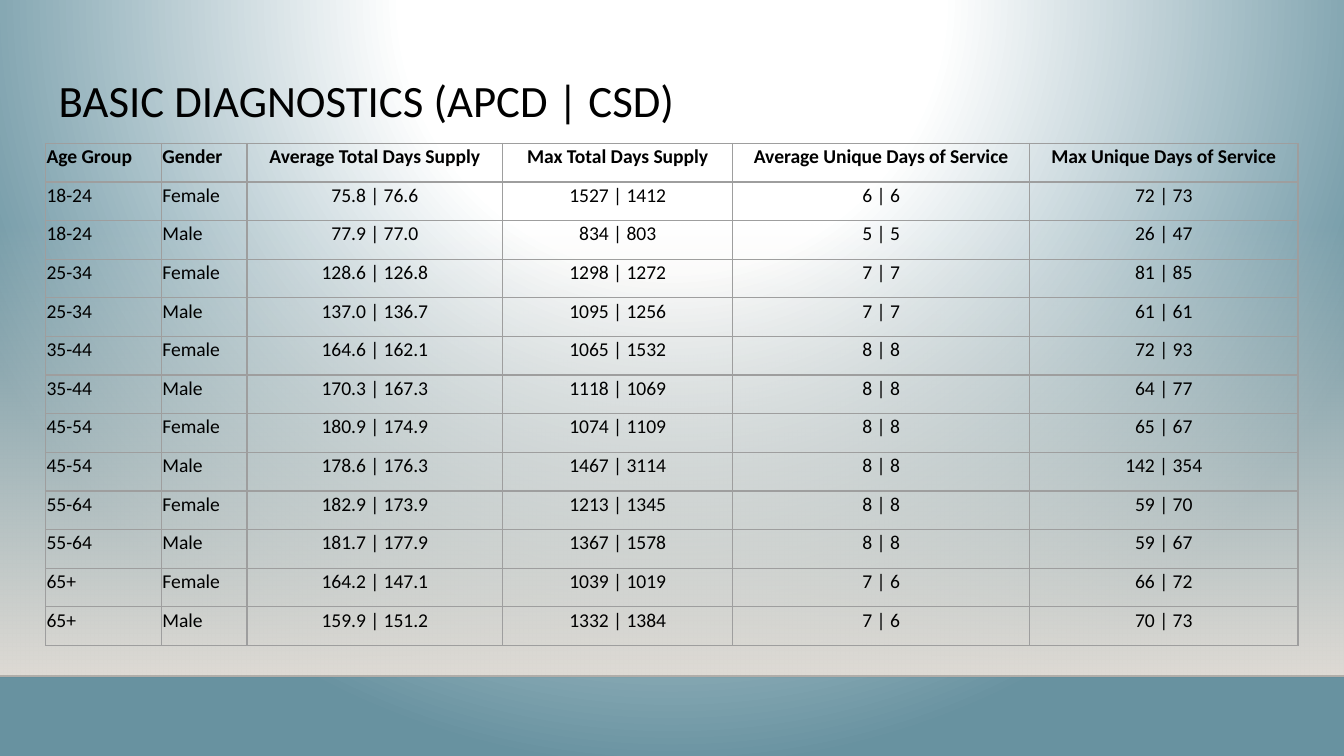
from dataclasses import dataclass

from lxml.etree import SubElement
from pptx import Presentation
from pptx.dml.color import RGBColor
from pptx.enum.shapes import MSO_CONNECTOR, MSO_SHAPE
from pptx.enum.text import MSO_ANCHOR, PP_ALIGN
from pptx.oxml import parse_xml
from pptx.oxml.ns import nsdecls, qn
from pptx.slide import Slide
from pptx.table import _Cell
from pptx.text.text import _Paragraph
from pptx.util import Cm, Pt

COLOURS = {
    "white": "FFFFFF",
    "teal": "6892A0",
    "sand": "DFDBD5",
    "horizon": "000001",
    "text": "000000",
    "border": "9E9E9E",
}
FONT = "Calibri"
SLIDE_WIDTH, SLIDE_HEIGHT = Cm(25.4), Cm(14.29)
HORIZON_TOP = Cm(12.78)
CONTENT_LEFT, CONTENT_WIDTH = Cm(0.86), Cm(23.67)
ROW_HEIGHT = Cm(0.73)


@dataclass(frozen=True)
class GradientStop:
    position: int
    colour: str
    opacity: int = 100


@dataclass(frozen=True)
class Column:
    heading: str
    width: float
    alignment: PP_ALIGN = PP_ALIGN.CENTER


COLUMNS = [
    Column("Age Group", 2.19, PP_ALIGN.LEFT),
    Column("Gender", 1.62, PP_ALIGN.LEFT),
    Column("Average Total Days Supply", 4.83),
    Column("Max Total Days Supply", 4.35),
    Column("Average Unique Days of Service", 5.61),
    Column("Max Unique Days of Service", 5.07),
]
ROWS = [
    ("18-24", "Female", "75.8 | 76.6", "1527 | 1412", "6 | 6", "72 | 73"),
    ("18-24", "Male", "77.9 | 77.0", "834 | 803", "5 | 5", "26 | 47"),
    ("25-34", "Female", "128.6 | 126.8", "1298 | 1272", "7 | 7", "81 | 85"),
    ("25-34", "Male", "137.0 | 136.7", "1095 | 1256", "7 | 7", "61 | 61"),
    ("35-44", "Female", "164.6 | 162.1", "1065 | 1532", "8 | 8", "72 | 93"),
    ("35-44", "Male", "170.3 | 167.3", "1118 | 1069", "8 | 8", "64 | 77"),
    ("45-54", "Female", "180.9 | 174.9", "1074 | 1109", "8 | 8", "65 | 67"),
    ("45-54", "Male", "178.6 | 176.3", "1467 | 3114", "8 | 8", "142 | 354"),
    ("55-64", "Female", "182.9 | 173.9", "1213 | 1345", "8 | 8", "59 | 70"),
    ("55-64", "Male", "181.7 | 177.9", "1367 | 1578", "8 | 8", "59 | 67"),
    ("65+", "Female", "164.2 | 147.1", "1039 | 1019", "7 | 6", "66 | 72"),
    ("65+", "Male", "159.9 | 151.2", "1332 | 1384", "7 | 6", "70 | 73"),
]


def replace_solid_fill(properties, stops: list[GradientStop], direction: str) -> None:
    """Swap the solid fill of a properties element for a gradient."""
    stop_xml = "".join(
        f'<a:gs pos="{stop.position * 1000}"><a:srgbClr val="{COLOURS[stop.colour]}">'
        f'<a:alpha val="{stop.opacity * 1000}"/></a:srgbClr></a:gs>'
        for stop in stops
    )
    gradient = parse_xml(
        f'<a:gradFill {nsdecls("a")} rotWithShape="1">'
        f"<a:gsLst>{stop_xml}</a:gsLst>{direction}</a:gradFill>"
    )
    properties.replace(properties.find(qn("a:solidFill")), gradient)


def add_backdrop(slide: Slide) -> None:
    slide.background.fill.solid()
    replace_solid_fill(
        slide.element.find(".//" + qn("p:bgPr")),
        [GradientStop(0, "white"), GradientStop(35, "white"), GradientStop(100, "teal")],
        '<a:path path="circle"><a:fillToRect l="50000" t="-80000" r="50000" b="180000"/></a:path>',
    )

    haze_top = Cm(4.22)
    haze = slide.shapes.add_shape(
        MSO_SHAPE.RECTANGLE, 0, haze_top, SLIDE_WIDTH, HORIZON_TOP - haze_top
    )
    haze.shadow.inherit = False
    haze.line.fill.background()
    haze.fill.solid()
    replace_solid_fill(
        haze.element.spPr,
        [GradientStop(0, "sand", 0), GradientStop(100, "sand")],
        '<a:lin ang="5400000" scaled="0"/>',
    )

    horizon = slide.shapes.add_connector(
        MSO_CONNECTOR.STRAIGHT, 0, HORIZON_TOP, SLIDE_WIDTH, HORIZON_TOP
    )
    horizon.line.width = Pt(1)
    horizon.line.color.rgb = RGBColor.from_string(COLOURS["horizon"])
    properties = horizon.element.spPr
    colour = properties.find(".//" + qn("a:srgbClr"))
    SubElement(colour, qn("a:alpha"), val="20000")
    SubElement(properties, qn("a:effectLst"))


def format_runs(paragraph: _Paragraph, size: float, bold: bool = False) -> None:
    for run in paragraph.runs:
        run.font.name = FONT
        run.font.size = Pt(size)
        run.font.bold = bold
        run.font.color.rgb = RGBColor.from_string(COLOURS["text"])


def add_title(slide: Slide, text: str) -> None:
    title = slide.shapes.add_textbox(CONTENT_LEFT, Cm(1.24), CONTENT_WIDTH, Cm(1.96))
    text_frame = title.text_frame
    text_frame.word_wrap = True
    text_frame.margin_left = text_frame.margin_right = Cm(0.25)
    text_frame.margin_top = text_frame.margin_bottom = Cm(0.25)
    text_frame.text = text
    paragraph = text_frame.paragraphs[0]
    paragraph.line_spacing = 0.9
    format_runs(paragraph, 24)


def add_borders(cell: _Cell) -> None:
    properties = cell._tc.get_or_add_tcPr()
    for index, side in enumerate(("lnL", "lnR", "lnT", "lnB")):
        border = parse_xml(
            f'<a:{side} {nsdecls("a")} w="{Pt(0.75)}"><a:solidFill>'
            f'<a:srgbClr val="{COLOURS["border"]}"/></a:solidFill></a:{side}>'
        )
        properties.insert(index, border)


def fill_cell(cell: _Cell, text: str, alignment: PP_ALIGN, bold: bool) -> None:
    cell.margin_left = cell.margin_right = cell.margin_top = Cm(0.02)
    cell.margin_bottom = Cm(0.25)
    cell.vertical_anchor = MSO_ANCHOR.BOTTOM
    cell.fill.background()
    add_borders(cell)
    cell.text_frame.text = text
    paragraph = cell.text_frame.paragraphs[0]
    paragraph.alignment = alignment
    format_runs(paragraph, 10.5, bold)


def add_diagnostics_table(slide: Slide) -> None:
    records = [tuple(column.heading for column in COLUMNS), *ROWS]
    table = slide.shapes.add_table(
        len(records), len(COLUMNS), CONTENT_LEFT, Cm(2.71),
        CONTENT_WIDTH, ROW_HEIGHT * len(records),
    ).table
    table.first_row = table.horz_banding = False
    for table_column, column in zip(table.columns, COLUMNS):
        table_column.width = Cm(column.width)
    for row_index, record in enumerate(records):
        table.rows[row_index].height = ROW_HEIGHT
        for column_index, (column, text) in enumerate(zip(COLUMNS, record)):
            cell = table.cell(row_index, column_index)
            fill_cell(cell, text, column.alignment, bold=row_index == 0)


def main() -> None:
    presentation = Presentation()
    presentation.slide_width = SLIDE_WIDTH
    presentation.slide_height = SLIDE_HEIGHT
    slide = presentation.slides.add_slide(presentation.slide_layouts[6])
    add_backdrop(slide)
    add_title(slide, "BASIC DIAGNOSTICS (APCD | CSD)")
    add_diagnostics_table(slide)
    presentation.save("out.pptx")


if __name__ == "__main__":
    main()
